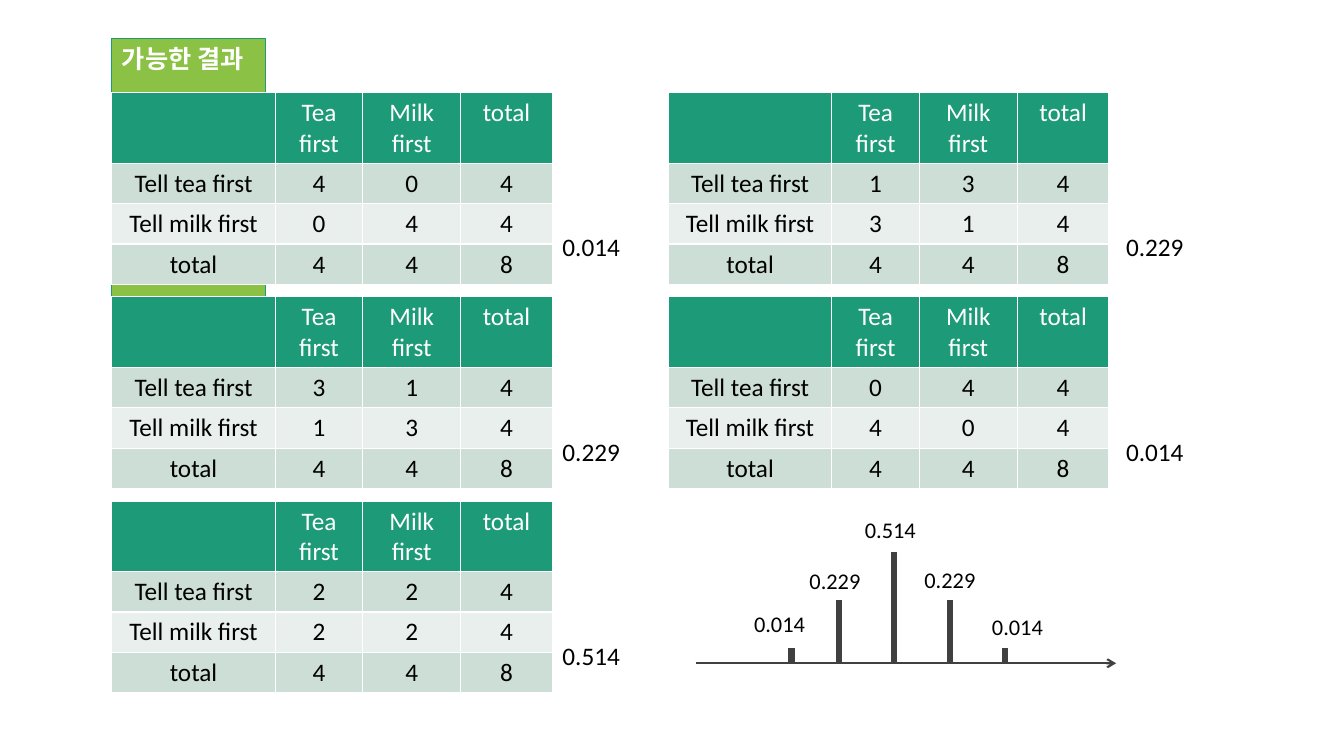
from dataclasses import dataclass
from math import comb

from lxml import etree
from pptx import Presentation
from pptx.dml.color import RGBColor
from pptx.enum.shapes import MSO_CONNECTOR
from pptx.enum.text import MSO_ANCHOR, MSO_AUTO_SIZE, PP_ALIGN
from pptx.oxml.ns import qn
from pptx.util import Inches, Pt

STRAIGHT = MSO_CONNECTOR.STRAIGHT
TOP = MSO_ANCHOR.TOP
FIT_SHAPE = MSO_AUTO_SIZE.SHAPE_TO_FIT_TEXT
LEFT, CENTER = PP_ALIGN.LEFT, PP_ALIGN.CENTER


@dataclass(frozen=True)
class Theme:
    font: str = "Calibri"
    body_size: float = 18
    chart_size: float = 16
    white: str = "FFFFFF"
    black: str = "000000"
    green: str = "1D9A78"
    lime: str = "8BC145"
    band_dark: str = "CDDED6"
    band_light: str = "E8EFEC"
    axis: str = "404040"


THEME = Theme()
SLIDE_SIZE = (13.33, 7.5)

# Grid of outcome tables, filled column by column
TABLE_LEFTS = (1.11, 6.63)
PROBABILITY_LEFTS = (5.48, 11.07)
FIRST_TOP, ROW_PITCH, ROWS_PER_COLUMN = 0.92, 2.025, 3
PROBABILITY_DROP = 1.33
COLUMN_WIDTHS = (1.62, 0.87, 0.97, 0.91)
ROW_HEIGHTS = (0.7, 0.4, 0.4, 0.4)

CUPS = 4
OUTCOMES = (4, 3, 2, 1, 0)

AXIS_START, AXIS_END, AXIS_Y = 6.9, 11.07, 6.58
# Correct cups, bar x, bar height, label left, label top
BARS = (
    (0, 7.85, 0.15, 7.38, 6.0),
    (1, 8.32, 0.63, 7.93, 5.58),
    (2, 8.87, 1.1, 8.48, 5.07),
    (3, 9.42, 0.63, 9.07, 5.57),
    (4, 9.97, 0.15, 9.74, 6.03),
)


def color(value):
    return RGBColor.from_string(value)


def place(shape, left, top, width, height):
    shape.left, shape.top = Inches(left), Inches(top)
    shape.width, shape.height = Inches(width), Inches(height)


def write(frame, text, size=THEME.body_size, ink=THEME.black, bold=False, align=LEFT):
    para = frame.paragraphs[0]
    para.alignment = align
    span = para.add_run()
    span.text = text
    span.font.name = THEME.font
    span.font.size = Pt(size)
    span.font.bold = bold
    span.font.color.rgb = color(ink)


def fit_to_text(frame):
    frame.word_wrap = False
    frame.auto_size = FIT_SHAPE
    frame.vertical_anchor = TOP


def add_label(shapes, text, left, top, width, height, size):
    box = shapes.add_textbox(Inches(left), Inches(top), Inches(width), Inches(height))
    fit_to_text(box.text_frame)
    write(box.text_frame, text, size=size)


def add_line(shapes, start, end, weight, arrow=False):
    line = shapes.add_connector(STRAIGHT, *(Inches(value) for value in start + end))
    line.line.color.rgb = color(THEME.axis)
    line.line.width = Pt(weight)
    properties = line.line._get_or_add_ln()
    if arrow:
        etree.SubElement(properties, qn("a:tailEnd"), type="arrow")
    etree.SubElement(properties.getparent(), qn("a:effectLst"))


def format_title(title):
    place(title, 1.11, 0.38, 1.52, 0.4)
    title.fill.solid()
    title.fill.fore_color.rgb = color(THEME.lime)
    title.line.color.rgb = color(THEME.green)
    title.line.width = Pt(0.75)
    fit_to_text(title.text_frame)
    write(title.text_frame, "가능한 결과", ink=THEME.white, bold=True)


def probability(correct):
    """Chance of naming this many tea-first cups correctly by guessing."""
    return f"{comb(CUPS, correct) ** 2 / comb(2 * CUPS, CUPS):.3f}"


def outcome_rows(correct):
    wrong = CUPS - correct
    return (
        ("", "Tea first", "Milk first", "total"),
        ("Tell tea first", correct, wrong, CUPS),
        ("Tell milk first", wrong, correct, CUPS),
        ("total", CUPS, CUPS, 2 * CUPS),
    )


def add_outcome_table(shapes, correct, left, top):
    frame = shapes.add_table(
        len(ROW_HEIGHTS), len(COLUMN_WIDTHS), Inches(left), Inches(top),
        Inches(sum(COLUMN_WIDTHS)), Inches(sum(ROW_HEIGHTS)))
    table = frame.table
    for column, width in zip(table.columns, COLUMN_WIDTHS):
        column.width = Inches(width)
    fills = (THEME.green, THEME.band_dark, THEME.band_light, THEME.band_dark)
    for row, height, fill, values in zip(
            table.rows, ROW_HEIGHTS, fills, outcome_rows(correct)):
        row.height = Inches(height)
        ink = THEME.white if fill == THEME.green else THEME.black
        for cell, value in zip(row.cells, values):
            cell.fill.solid()
            cell.fill.fore_color.rgb = color(fill)
            if value != "":
                write(cell.text_frame, str(value), ink=ink, align=CENTER)


def add_outcomes(shapes):
    for index, correct in enumerate(OUTCOMES):
        column, row = divmod(index, ROWS_PER_COLUMN)
        top = FIRST_TOP + row * ROW_PITCH
        add_outcome_table(shapes, correct, TABLE_LEFTS[column], top)
        add_label(shapes, probability(correct), PROBABILITY_LEFTS[column],
                  top + PROBABILITY_DROP, 0.78, 0.4, THEME.body_size)


def add_distribution(shapes):
    sketch = shapes.add_group_shape().shapes
    add_line(sketch, (AXIS_START, AXIS_Y), (AXIS_END, AXIS_Y), 1.5, arrow=True)
    for correct, x, height, label_left, label_top in BARS:
        add_line(sketch, (x, AXIS_Y), (x, AXIS_Y - height), 4.5)
        add_label(sketch, probability(correct), label_left, label_top,
                  0.71, 0.37, THEME.chart_size)


def main():
    deck = Presentation()
    deck.slide_width, deck.slide_height = (Inches(side) for side in SLIDE_SIZE)
    page = deck.slides.add_slide(deck.slide_layouts.get_by_name("Title Only"))
    format_title(page.shapes.title)
    add_outcomes(page.shapes)
    add_distribution(page.shapes)
    deck.save("out.pptx")


if __name__ == "__main__":
    main()
